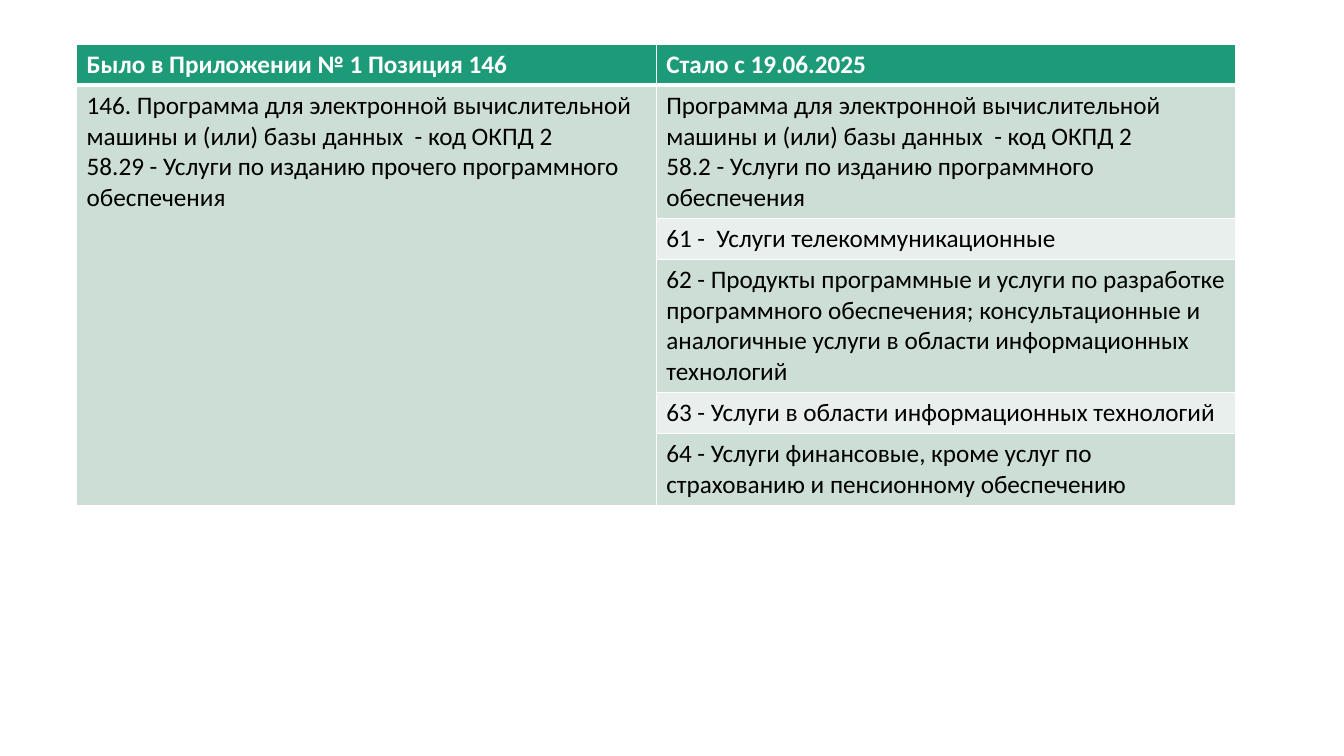
from lxml.etree import SubElement
from pptx import Presentation
from pptx.dml.color import RGBColor
from pptx.oxml.ns import qn
from pptx.util import Pt

COLORS = {"header": "1D9A78", "dark_band": "CDDED6", "light_band": "E8EFEC",
          "white": "FFFFFF", "black": "000000"}
FONT_NAME = "Calibri"
FONT_SIZE = 18
LINE_HEIGHT = 22
CELL_PADDING = 7.2

SOFTWARE = "Программа для электронной вычислительной машины и (или) базы данных  - код ОКПД 2"
HEADINGS = ["Было в Приложении № 1 Позиция 146", "Стало с 19.06.2025"]
OLD_POSITION = ["146. " + SOFTWARE, "58.29 - Услуги по изданию прочего программного обеспечения"]
NEW_POSITIONS = [
    (4, [SOFTWARE, "58.2 - Услуги по изданию программного обеспечения"]),
    (1, ["61 -  Услуги телекоммуникационные"]),
    (4, ["62 - Продукты программные и услуги по разработке программного обеспечения; "
         "консультационные и аналогичные услуги в области информационных технологий"]),
    (1, ["63 - Услуги в области информационных технологий"]),
    (2, ["64 - Услуги финансовые, кроме услуг по страхованию и пенсионному обеспечению"]),
]


def style_cell(cell, fill, top=1, bottom=1):
    """Give a cell white borders and a solid fill."""
    properties = cell._tc.get_or_add_tcPr()
    for tag, width in (("a:lnL", 1), ("a:lnR", 1), ("a:lnT", top), ("a:lnB", bottom)):
        line = SubElement(properties, qn(tag), w=str(Pt(width)))
        solid = SubElement(line, qn("a:solidFill"))
        SubElement(solid, qn("a:srgbClr"), val=COLORS["white"])
    cell.fill.solid()
    cell.fill.fore_color.rgb = RGBColor.from_string(COLORS[fill])


def write_cell(cell, lines, color, bold=False):
    """Write one paragraph per line into a cell."""
    frame = cell.text_frame
    for index, text in enumerate(lines):
        para = frame.add_paragraph() if index else frame.paragraphs[0]
        span = para.add_run()
        span.text = text
        span.font.name = FONT_NAME
        span.font.size = Pt(FONT_SIZE)
        span.font.bold = bold
        span.font.color.rgb = RGBColor.from_string(COLORS[color])


def add_comparison(page, left, top, width):
    """Place the table comparing the old position with the new ones."""
    line_counts = [1] + [count for count, lines in NEW_POSITIONS]
    heights = [count * LINE_HEIGHT + CELL_PADDING for count in line_counts]
    frame = page.shapes.add_table(len(heights), len(HEADINGS), Pt(left), Pt(top),
                                  Pt(width), Pt(sum(heights)))
    table = frame.table
    for column in table.columns:
        column.width = Pt(width / len(HEADINGS))
    for row, height in zip(table.rows, heights):
        row.height = Pt(height)

    for column, heading in enumerate(HEADINGS):
        cell = table.cell(0, column)
        style_cell(cell, "header", bottom=3)
        write_cell(cell, [heading], "white", bold=True)
    for row, (count, lines) in enumerate(NEW_POSITIONS, start=1):
        border = 3 if row == 1 else 1
        style_cell(table.cell(row, 0), "dark_band", top=border)
        style_cell(table.cell(row, 1), "dark_band" if row % 2 else "light_band", top=border)
        write_cell(table.cell(row, 1), lines, "black")
    table.cell(1, 0).merge(table.cell(len(NEW_POSITIONS), 0))
    write_cell(table.cell(1, 0), OLD_POSITION, "black")


def main():
    """Build and save the deck."""
    deck = Presentation()
    deck.slide_width = Pt(960)
    deck.slide_height = Pt(540)
    page = deck.slides.add_slide(deck.slide_layouts[6])
    add_comparison(page, 54.72, 31.7, 828)
    deck.save("out.pptx")


if __name__ == "__main__":
    main()
